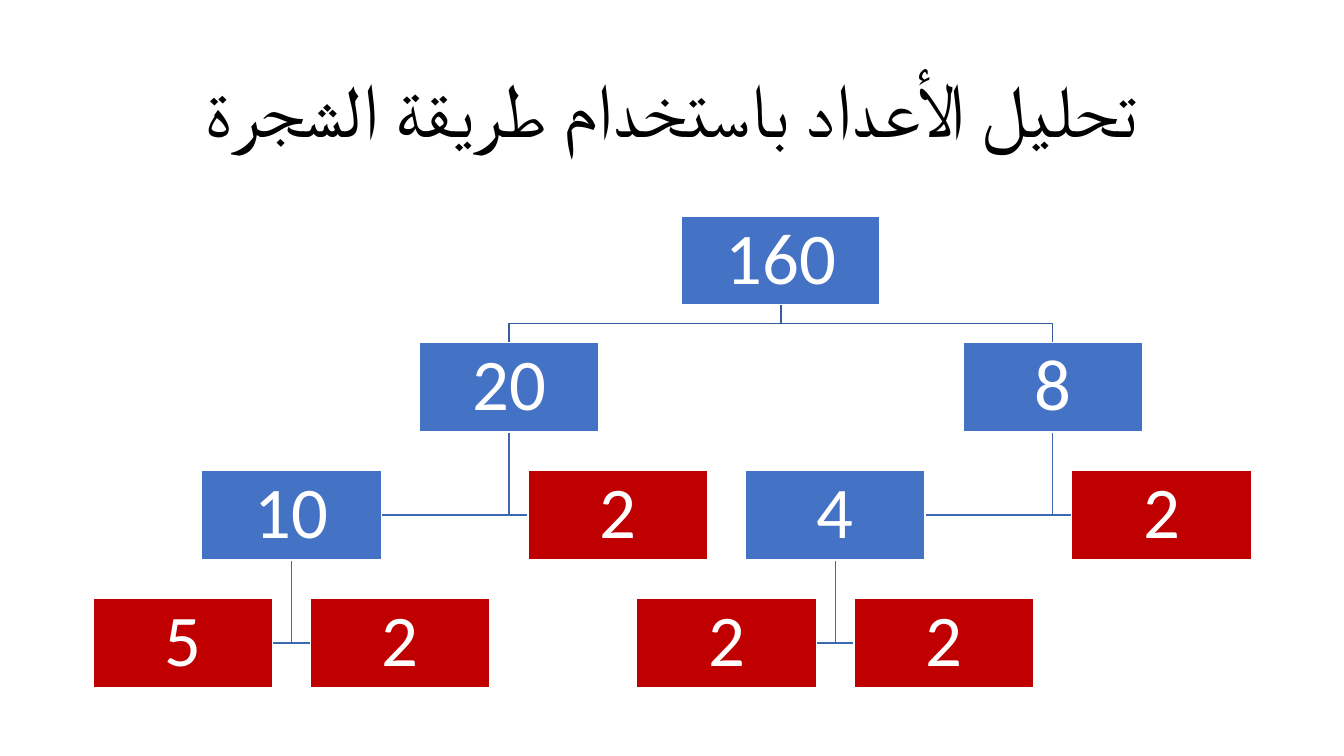
from lxml import etree
from pptx import Presentation
from pptx import util as u
from pptx.dml.color import RGBColor
from pptx.enum import shapes, text
from pptx.oxml.ns import qn

HUES = {"node": "4472C4", "prime": "C00000", "stem": "365B9D",
        "twig": "3E67B2", "white": "FFFFFF", "black": "000000"}
STEP = 2.74                          # half the gap between neighbour centres
TOPS = [5.46, 8.63, 11.85, 15.07]    # top of each level
ROOT = (5.0, 2.21)
BOX = (4.53, 2.26)

# (number, offset from the parent in steps, children)
TREE = ("160", 0, [
    ("20", -2.5, [
        ("10", -2, [("5", -1, []), ("2", 1, [])]),
        ("2", 1, [])]),
    ("8", 2.5, [
        ("4", -2, [("2", -1, []), ("2", 1, [])]),
        ("2", 1, [])]),
])


def hue(name):
    return RGBColor.from_string(HUES[name])


def assign(item, **values):
    for key, value in values.items():
        setattr(item, key, value)


def write(frame, words, size, color):
    """Put one centred paragraph in the middle of a text frame."""
    assign(frame, text=words, word_wrap=True, auto_size=text.MSO_AUTO_SIZE.NONE,
           vertical_anchor=text.MSO_ANCHOR.MIDDLE)
    para = frame.paragraphs[0]
    assign(para, alignment=text.PP_ALIGN.CENTER, line_spacing=0.9)
    font = para.runs[0].font
    assign(font, name="Calibri", size=u.Pt(size))
    font.color.rgb = hue(color)
    return para


def add_title(slide, words):
    title = slide.shapes.title
    assign(title, left=u.Cm(2.33), top=u.Cm(1.01), width=u.Cm(29.21), height=u.Cm(3.68))
    para = write(title.text_frame, words, 54, "black")
    para._p.get_or_add_pPr().set("rtl", "1")
    face = etree.SubElement(para.runs[0]._r.get_or_add_rPr(), qn("a:cs"))
    face.set("typeface", "Calibri")


def add_box(slide, words, mid, top, size, color):
    wide, high = size
    box = slide.shapes.add_shape(shapes.MSO_SHAPE.RECTANGLE, u.Cm(mid - wide / 2),
                                 u.Cm(top), u.Cm(wide), u.Cm(high))
    box.shadow.inherit = False
    box.fill.solid()
    box.fill.fore_color.rgb = hue(color)
    box.line.color.rgb = hue("white")
    box.line.width = u.Pt(1)
    sides = ("left", "right", "top", "bottom")
    assign(box.text_frame, **{f"margin_{side}": u.Cm(0.1) for side in sides})
    write(box.text_frame, words, 52, "white")


def add_branch(slide, points, color):
    """Draw an open bent line through points given in centimetres."""
    first, *rest = [(u.Cm(x), u.Cm(y)) for x, y in points]
    pen = slide.shapes.build_freeform(*first)
    pen.add_line_segments(rest, close=False)
    line = pen.convert_to_shape()
    line.shadow.inherit = False
    line.fill.background()
    line.line.color.rgb = hue(color)
    line.line.width = u.Pt(1)


def add_tree(slide, node, mid, level=0):
    """Draw the branches below a node, then the node itself."""
    number, _, kids = node
    size = BOX if level else ROOT
    base = TOPS[level] + size[1]
    for kid in kids:
        shift = kid[1] * STEP
        goal = mid + shift
        top = TOPS[level + 1]
        if level:
            edge = goal - BOX[0] / 2 if shift > 0 else goal + BOX[0] / 2
            bend = top + BOX[1] / 2
            add_branch(slide, [(mid, base), (mid, bend), (edge, bend)], "twig")
        else:
            bend = (base + top) / 2
            add_branch(slide, [(mid, base), (mid, bend), (goal, bend), (goal, top)], "stem")
        add_tree(slide, kid, goal, level + 1)
    add_box(slide, number, mid, TOPS[level], size, "node" if kids else "prime")


def main():
    deck = Presentation()
    assign(deck, slide_width=u.Cm(33.87), slide_height=u.Cm(19.05))
    slide = deck.slides.add_slide(deck.slide_layouts[5])
    add_title(slide, "تحليل الأعداد باستخدام طريقة الشجرة")
    add_tree(slide, TREE, 19.68)
    deck.save("out.pptx")


if __name__ == "__main__":
    main()
